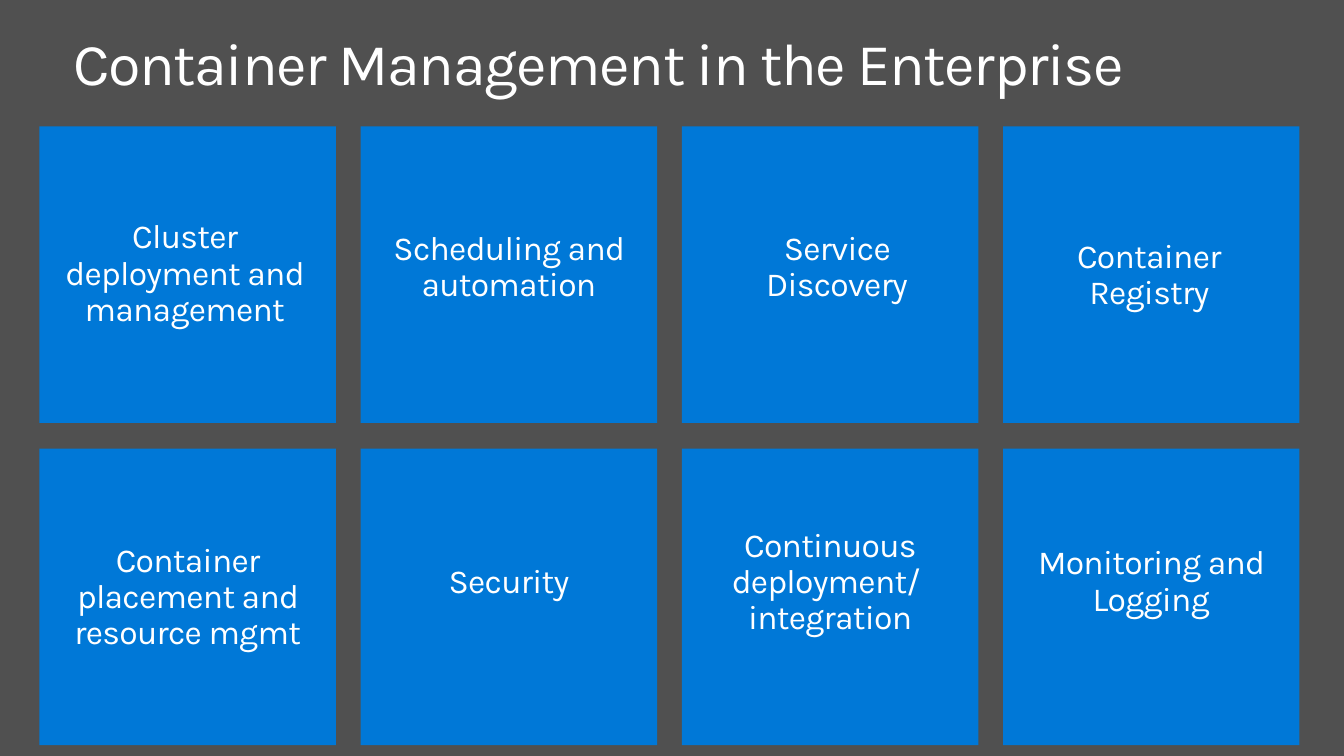
from pptx import Presentation
from pptx.dml.color import RGBColor
from pptx.enum.shapes import MSO_SHAPE as Shape
from pptx.enum.text import MSO_ANCHOR as Anchor, MSO_AUTO_SIZE as AutoSize, PP_ALIGN as Align
from pptx.util import Emu, Pt

PX = 9144  # EMU per px, 100 px to the inch
GREY = RGBColor(0x50, 0x50, 0x50)
BLUE = RGBColor(0x00, 0x78, 0xD7)
WHITE = RGBColor(0xFF, 0xFF, 0xFF)
FONT = "Karla"

# Tile grid
COLUMNS = 4
TILE = 300
GRID_LEFT, GRID_TOP = 40, 128
COLUMN_STEP, ROW_STEP = 325, 326
LABEL_WIDTH = 250

# Label text, left, top, height; in reading order
LABELS = [
    ("Cluster deployment and management", 62, 222, 111),
    ("Scheduling and automation", 390, 234, 74),
    ("Service Discovery", 722, 252, 37),
    ("Container\vRegistry", 1038, 242, 74),
    ("Container placement and resource mgmt", 65, 549, 111),
    ("Security", 390, 571, 37),
    ("Continuous deployment/ \vintegration", 715, 534, 111),
    ("Monitoring and Logging", 1040, 552, 74),
]


def px(*lengths):
    return [Emu(length * PX) for length in lengths]


def write(frame, text, size, spacing, align=Align.LEFT, anchor=Anchor.TOP,
          margins=(0, 0), after=0):
    """Fill a text frame; spacing between letters is in hundredths of a point."""
    frame.word_wrap = True
    frame.auto_size = AutoSize.NONE
    frame.vertical_anchor = anchor
    frame.margin_left = frame.margin_right = Emu(margins[0] * PX)
    frame.margin_top = frame.margin_bottom = Emu(margins[1] * PX)
    para = frame.paragraphs[0]
    para.text = text
    para.alignment = align
    para.line_spacing = 0.9
    para.space_before = Pt(0)
    para.space_after = Pt(after)
    for span in para.runs:
        span.font.name = FONT
        span.font.size = Pt(size)
        span.font.color.rgb = WHITE
        span.font._element.set("spc", str(spacing))


def add_title(page, text):
    title = page.shapes.title
    title.left, title.top, title.width, title.height = px(58, 25, 1244, 83)
    write(title.text_frame, text, size=43.2, spacing=-100, margins=(16, 10))


def add_tile(page, column, row):
    tile = page.shapes.add_shape(
        Shape.RECTANGLE,
        *px(GRID_LEFT + column * COLUMN_STEP, GRID_TOP + row * ROW_STEP, TILE, TILE))
    tile.shadow.inherit = False
    tile.fill.solid()
    tile.fill.fore_color.rgb = BLUE
    tile.line.fill.background()


def add_label(page, text, left, top, height):
    box = page.shapes.add_textbox(*px(left, top, LABEL_WIDTH, height))
    write(box.text_frame, text, size=24.5, spacing=-50,
          align=Align.CENTER, anchor=Anchor.MIDDLE, after=4.1)


def main():
    deck = Presentation()
    deck.slide_width, deck.slide_height = px(1360, 765)
    page = deck.slides.add_slide(deck.slide_layouts[5])

    # Background and title
    page.background.fill.solid()
    page.background.fill.fore_color.rgb = GREY
    add_title(page, "Container Management in the Enterprise")

    # Tiles with their labels
    for index, label in enumerate(LABELS):
        row, column = divmod(index, COLUMNS)
        add_tile(page, column, row)
        add_label(page, *label)

    deck.save("out.pptx")


if __name__ == "__main__":
    main()
